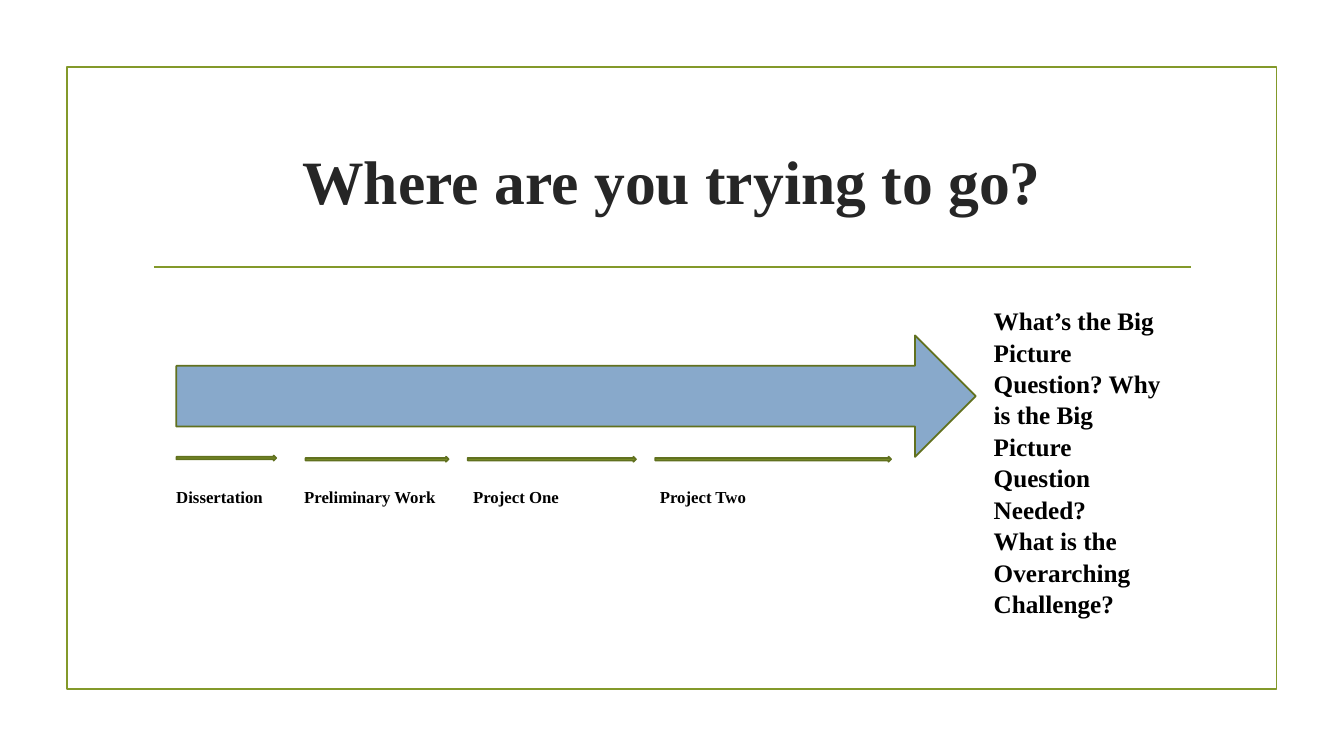
"""Builds the research roadmap slide with its timeline arrows."""
from lxml import etree
from pptx import Presentation
from pptx.dml.color import RGBColor
from pptx.enum import shapes, text
from pptx.oxml import ns
from pptx.util import Pt

COLORS = {
    "accent": "83992A",
    "outline": "61711F",
    "arrow": "88A9CB",
    "title": "262626",
    "body": "000000",
}
LINE_WIDTH = 1.25
STAGES_LEFT = 126
STAGES = [
    ("Dissertation", 0, 126, 325.4, 71.3),
    ("Preliminary Work", 91.4, 218.2, 326.2, 102.2),
    ("Project One", 212, 334.1, 326.2, 120.2),
    ("Project Two", 345.4, 468, 326.2, 168.5),
]


def color(name):
    """Return the named colour."""
    return RGBColor.from_string(COLORS[name])


def apply_format(target, values):
    """Set each attribute in values on the target."""
    for name, value in values.items():
        setattr(target, name, value)


def format_font(paragraph, size, color_name):
    """Give a paragraph the bold serif font of the slide."""
    apply_format(paragraph.font, {"name": "Times New Roman", "size": Pt(size), "bold": True})
    paragraph.font.color.rgb = color(color_name)


def format_line(line, color_name):
    """Give a line its colour and the common width."""
    line.color.rgb = color(color_name)
    line.width = Pt(LINE_WIDTH)


def add_block(slide, kind, box, line_name, fill_name=None):
    """Add an outlined preset shape, filled when a fill is named."""
    shape = slide.shapes.add_shape(kind, *map(Pt, box))
    shape.shadow.inherit = False
    if fill_name:
        shape.fill.solid()
        shape.fill.fore_color.rgb = color(fill_name)
    else:
        shape.fill.background()
    format_line(shape.line, line_name)


def add_arrow(slide, box, fill_name):
    """Add a right-pointing block arrow."""
    add_block(slide, shapes.MSO_SHAPE.RIGHT_ARROW, box, "outline", fill_name)


def add_rule(slide, left, right, top):
    """Add a horizontal rule without a shadow."""
    rule = slide.shapes.add_connector(
        shapes.MSO_CONNECTOR.STRAIGHT, Pt(left), Pt(top), Pt(right), Pt(top))
    format_line(rule.line, "accent")
    etree.SubElement(rule._element.spPr, ns.qn("a:effectLst"))


def add_text(slide, box, lines, size, spacing=1.0, tabs=()):
    """Add a wrapped text box, one paragraph a line, with tab stops."""
    frame = slide.shapes.add_textbox(*map(Pt, box)).text_frame
    frame.word_wrap = True
    frame.text = "\n".join(lines)
    for paragraph in frame.paragraphs:
        paragraph.line_spacing = spacing
        if tabs:
            properties = paragraph._p.get_or_add_pPr()
            tab_list = etree.SubElement(properties, ns.qn("a:tabLst"))
            for position in tabs:
                etree.SubElement(tab_list, ns.qn("a:tab"), pos=str(Pt(position)), algn="l")
        format_font(paragraph, size, "body")


def set_title(slide, box, wording):
    """Move, fill and format the title placeholder."""
    title = slide.shapes.title
    apply_format(title, dict(zip(("left", "top", "width", "height"), map(Pt, box))))
    frame = title.text_frame
    frame.text = wording
    apply_format(frame, {
        "word_wrap": True,
        "auto_size": text.MSO_AUTO_SIZE.NONE,
        "vertical_anchor": text.MSO_ANCHOR.MIDDLE,
    })
    paragraph = frame.paragraphs[0]
    paragraph.alignment = text.PP_ALIGN.CENTER
    format_font(paragraph, 44, "title")


def main():
    """Build and save the slide."""
    presentation = Presentation()
    apply_format(presentation, {"slide_width": Pt(960), "slide_height": Pt(540)})
    slide = presentation.slides.add_slide(presentation.slide_layouts[5])
    add_block(slide, shapes.MSO_SHAPE.RECTANGLE, (47.8, 48, 864, 444), "accent")
    add_rule(slide, 110, 850.5, 190.8)
    set_title(slide, (102, 77, 756, 103), "Where are you trying to go?")

    add_arrow(slide, (STAGES_LEFT, 239.6, 571, 86.8), "arrow")
    for _, _, left, top, width in STAGES:
        add_arrow(slide, (left, top, width, 3.6), "accent")
    labels = "\t".join(stage[0] for stage in STAGES)
    tabs = [stage[1] for stage in STAGES[1:]]
    add_text(slide, (STAGES_LEFT - 7.2, 344.2, 495.4, 21.8), [labels], 12, tabs=tabs)

    questions = [
        "What’s the Big Picture Question? Why is the Big Picture Question Needed?",
        "What is the Overarching Challenge?",
    ]
    add_text(slide, (702.7, 213.8, 143.3, 225.4), questions, 18, spacing=1.04)
    presentation.save("out.pptx")


if __name__ == "__main__":
    main()
